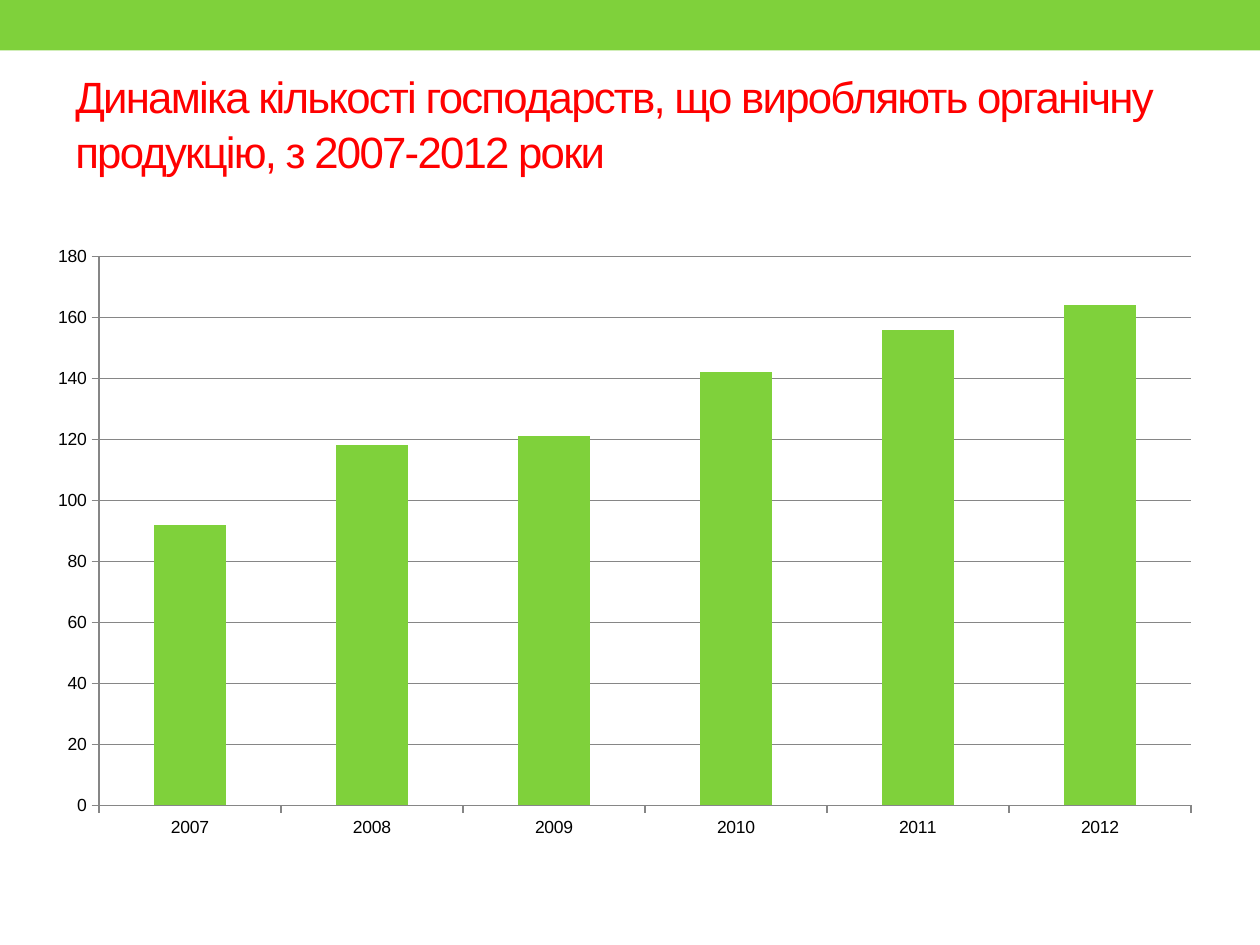
import pptx
import pptx.chart.data
import pptx.dml.color
import pptx.enum.chart
import pptx.enum.shapes
import pptx.enum.text
import pptx.oxml
import pptx.oxml.ns
import pptx.util

Inches = pptx.util.Inches
Pt = pptx.util.Pt

COLORS = {"green": "7FD13B", "red": "FF0000", "black": "000000", "grey": "868686"}
FARMS = {"2007": 92, "2008": 118, "2009": 121, "2010": 142, "2011": 156, "2012": 164}
TITLE = "Динаміка кількості господарств, що виробляють органічну продукцію, з 2007-2012 роки"
PLOT_AREA = {"x": 0.054, "y": 0.036, "w": 0.925, "h": 0.893}


def color(name):
    return pptx.dml.color.RGBColor.from_string(COLORS[name])


def assign(target, values):
    for name, value in values.items():
        setattr(target, name, value)


class Page:
    font_name = "Arial"

    def __init__(self, deck):
        self.slide = deck.slides.add_slide(deck.slide_layouts[6])

    def style_font(self, font, size, color_name):
        assign(font, {"name": self.font_name, "size": Pt(size)})
        font.color.rgb = color(color_name)

    def style_line(self, line):
        line.color.rgb = color("grey")
        line.width = Pt(0.75)

    def band(self, left, top, width, height, color_name):
        shape = self.slide.shapes.add_shape(
            pptx.enum.shapes.MSO_SHAPE.RECTANGLE,
            Inches(left), Inches(top), Inches(width), Inches(height))
        shape.shadow.inherit = False
        shape.fill.solid()
        shape.fill.fore_color.rgb = color(color_name)
        shape.line.fill.background()

    def title(self, text, left, top, width, height, size, color_name):
        box = self.slide.shapes.add_textbox(
            Inches(left), Inches(top), Inches(width), Inches(height))
        assign(box.text_frame, {
            "word_wrap": True,
            "vertical_anchor": pptx.enum.text.MSO_ANCHOR.MIDDLE,
        })
        para = box.text_frame.paragraphs[0]
        para.line_spacing = 1.05
        span = para.add_run()
        span.text = text
        self.style_font(span.font, size, color_name)
        span.font._element.set("spc", "-100")
        para.add_line_break()

    def column_chart(self, values, left, top, width, height):
        data = pptx.chart.data.CategoryChartData()
        data.categories = list(values)
        data.add_series("Series 1", list(values.values()))
        chart = self.slide.shapes.add_chart(
            pptx.enum.chart.XL_CHART_TYPE.COLUMN_CLUSTERED,
            Inches(left), Inches(top), Inches(width), Inches(height), data).chart
        assign(chart, {"has_legend": False, "has_title": False})
        self.style_font(chart.font, 10, "black")
        plot = chart.plots[0]
        assign(plot, {"gap_width": 150, "vary_by_categories": False})
        fill = plot.series[0].format.fill
        fill.solid()
        fill.fore_color.rgb = color("green")
        for axis in (chart.category_axis, chart.value_axis):
            assign(axis, {
                "major_tick_mark": pptx.enum.chart.XL_TICK_MARK.OUTSIDE,
                "minor_tick_mark": pptx.enum.chart.XL_TICK_MARK.NONE,
            })
            self.style_line(axis.format.line)
        assign(chart.value_axis, {
            "minimum_scale": 0, "maximum_scale": 180, "major_unit": 20,
            "has_major_gridlines": True,
        })
        self.style_line(chart.value_axis.major_gridlines.format.line)
        self.place_plot(chart)

    def place_plot(self, chart):
        qn = pptx.oxml.ns.qn
        area = chart._chartSpace.find(".//" + qn("c:plotArea"))
        for old in area.findall(qn("c:layout")):
            area.remove(old)
        settings = {"layoutTarget": "inner", "xMode": "edge", "yMode": "edge", **PLOT_AREA}
        parts = "".join(f'<c:{name} val="{value}"/>' for name, value in settings.items())
        area.insert(0, pptx.oxml.parse_xml(
            f'<c:layout {pptx.oxml.ns.nsdecls("c")}>'
            f"<c:manualLayout>{parts}</c:manualLayout></c:layout>"))


def main():
    deck = pptx.Presentation()
    assign(deck, {"slide_width": Inches(10), "slide_height": Inches(7.5)})
    page = Page(deck)
    page.band(0, 0, 10, 0.4, "green")
    page.title(TITLE, 0.5, 0.58, 9, 1.08, 25, "red")
    page.column_chart(FARMS, 0.28, 1.86, 9.37, 4.88)
    deck.save("out.pptx")


if __name__ == "__main__":
    main()
